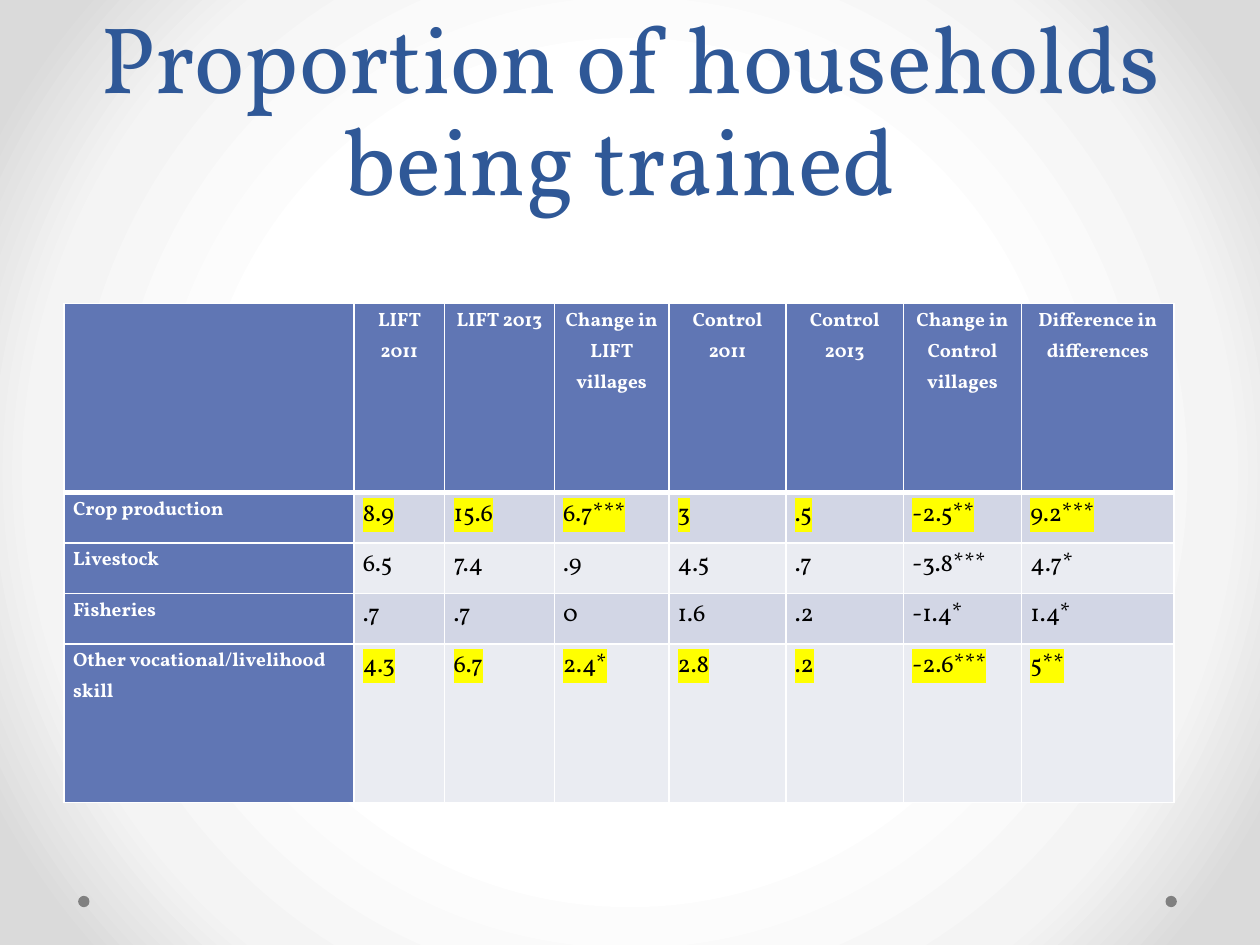
from pptx import Presentation, util as u
from pptx.dml.color import RGBColor
from pptx.enum import shapes, text
from pptx.oxml import parse_xml
from pptx.oxml.ns import nsdecls

# Content
TITLE = "Proportion of households being trained "
HEADERS = ["", "LIFT 2011", "LIFT 2013", "Change in LIFT villages", "Control 2011",
           "Control 2013", "Change in Control villages", "Difference in differences"]
ROWS = [
    ["Crop production", "8.9", "15.6", "6.7***", "3", ".5", "-2.5**", "9.2***"],
    ["Livestock", "6.5", "7.4", ".9", "4.5", ".7", "-3.8***", "4.7*"],
    ["Fisheries", ".7", ".7", "0", "1.6", ".2", "-1.4*", "1.4*"],
    ["Other vocational/livelihood skill", "4.3", "6.7", "2.4*", "2.8", ".2", "-2.6***", "5**"],
]
HIGHLIGHTED = {1, 4}
COL_WIDTHS = [2.3, 0.72, 0.87, 0.91, 0.93, 0.93, 0.94, 1.21]
ROW_HEIGHTS = [1.5, 0.4, 0.4, 0.4, 1.26]

THEME = {
    "font": "Vollkorn",
    "title": "2F5897", "head": "6076B4", "bands": ["EAECF2", "D2D6E5"],
    "light": "FFFFFF", "dark": "000000", "mark": "FFFF00", "dot": "808080",
    "background": [(50, "FFFFFF"), (76, "F4F4F4"), (92, "DADADA")],
    "title_size": 54, "label_size": 11, "value_size": 14,
}


def set_background(s):
    stops = "".join(f'<a:gs pos="{pos * 1000}"><a:srgbClr val="{c}"/></a:gs>'
                    for pos, c in THEME["background"])
    s.element.cSld.insert(0, parse_xml(
        f'<p:bg {nsdecls("p", "a")}><p:bgPr><a:gradFill rotWithShape="1"><a:gsLst>{stops}</a:gsLst>'
        '<a:path path="circle"><a:fillToRect l="50000" t="50000" r="50000" b="50000"/></a:path>'
        '</a:gradFill><a:effectLst/></p:bgPr></p:bg>'))


def format_run(r, size, color, bold=False, mark=None):
    r.font.size, r.font.bold = u.Pt(size), bold
    r.font.color.rgb = RGBColor.from_string(color)
    if mark:
        r.font._element.append(parse_xml(
            f'<a:highlight {nsdecls("a")}><a:srgbClr val="{mark}"/></a:highlight>'))
    r.font.name = THEME["font"]


def set_borders(cell, bottom):
    tcPr = cell._tc.get_or_add_tcPr()
    for i, side in enumerate("LRTB"):
        width = u.Pt(bottom if side == "B" else 1)
        tcPr.insert(i, parse_xml(
            f'<a:ln{side} {nsdecls("a")} w="{width}"><a:solidFill>'
            f'<a:srgbClr val="{THEME["light"]}"/></a:solidFill></a:ln{side}>'))


def fill_cell(cell, row, col, value):
    is_label = row == 0 or col == 0
    cell.margin_left = cell.margin_right = u.Inches(0.07)
    cell.margin_top = cell.margin_bottom = 0
    cell.fill.solid()
    cell.fill.fore_color.rgb = RGBColor.from_string(
        THEME["head"] if is_label else THEME["bands"][row % 2])
    set_borders(cell, bottom=3 if row == 0 else 1)
    if not value:
        return
    cell.text_frame.text = value
    p = cell.text_frame.paragraphs[0]
    p.line_spacing = 1.15
    if row == 0:
        p.alignment = text.PP_ALIGN.CENTER
    # Long headers run without extra spacing
    gap = 2 if col == 0 else 0 if "in " in value else 6
    p.space_before = p.space_after = u.Pt(gap)
    if is_label:
        format_run(p.runs[0], THEME["label_size"], THEME["light"], bold=True)
    else:
        format_run(p.runs[0], THEME["value_size"], THEME["dark"],
                   mark=THEME["mark"] if row in HIGHLIGHTED else None)


prs = Presentation()
prs.slide_width, prs.slide_height = u.Inches(10), u.Inches(7.5)
s = prs.slides.add_slide(prs.slide_layouts[6])
set_background(s)

# Corner dots
for left in (9.25, 0.62):
    sp = s.shapes.add_shape(shapes.MSO_SHAPE.OVAL, u.Inches(left), u.Inches(7.11),
                            u.Inches(0.09), u.Inches(0.09))
    sp.shadow.inherit = False
    sp.fill.solid()
    sp.fill.fore_color.rgb = RGBColor.from_string(THEME["dot"])
    sp.line.fill.background()

# Title
tf = s.shapes.add_textbox(u.Inches(0.5), 0, u.Inches(9), u.Inches(1.75)).text_frame
tf.word_wrap = True
tf.vertical_anchor = text.MSO_ANCHOR.BOTTOM
tf.text = TITLE
p = tf.paragraphs[0]
p.alignment = text.PP_ALIGN.CENTER
p.line_spacing = u.Pt(58)
format_run(p.runs[0], THEME["title_size"], THEME["title"])

# Table
table = s.shapes.add_table(len(ROWS) + 1, len(HEADERS), u.Inches(0.51), u.Inches(2.41),
                           u.Inches(sum(COL_WIDTHS)), u.Inches(sum(ROW_HEIGHTS))).table
for column, width in zip(table.columns, COL_WIDTHS):
    column.width = u.Inches(width)
for row, height in zip(table.rows, ROW_HEIGHTS):
    row.height = u.Inches(height)
for i, values in enumerate([HEADERS] + ROWS):
    for j, value in enumerate(values):
        fill_cell(table.cell(i, j), i, j, value)

prs.save("out.pptx")
